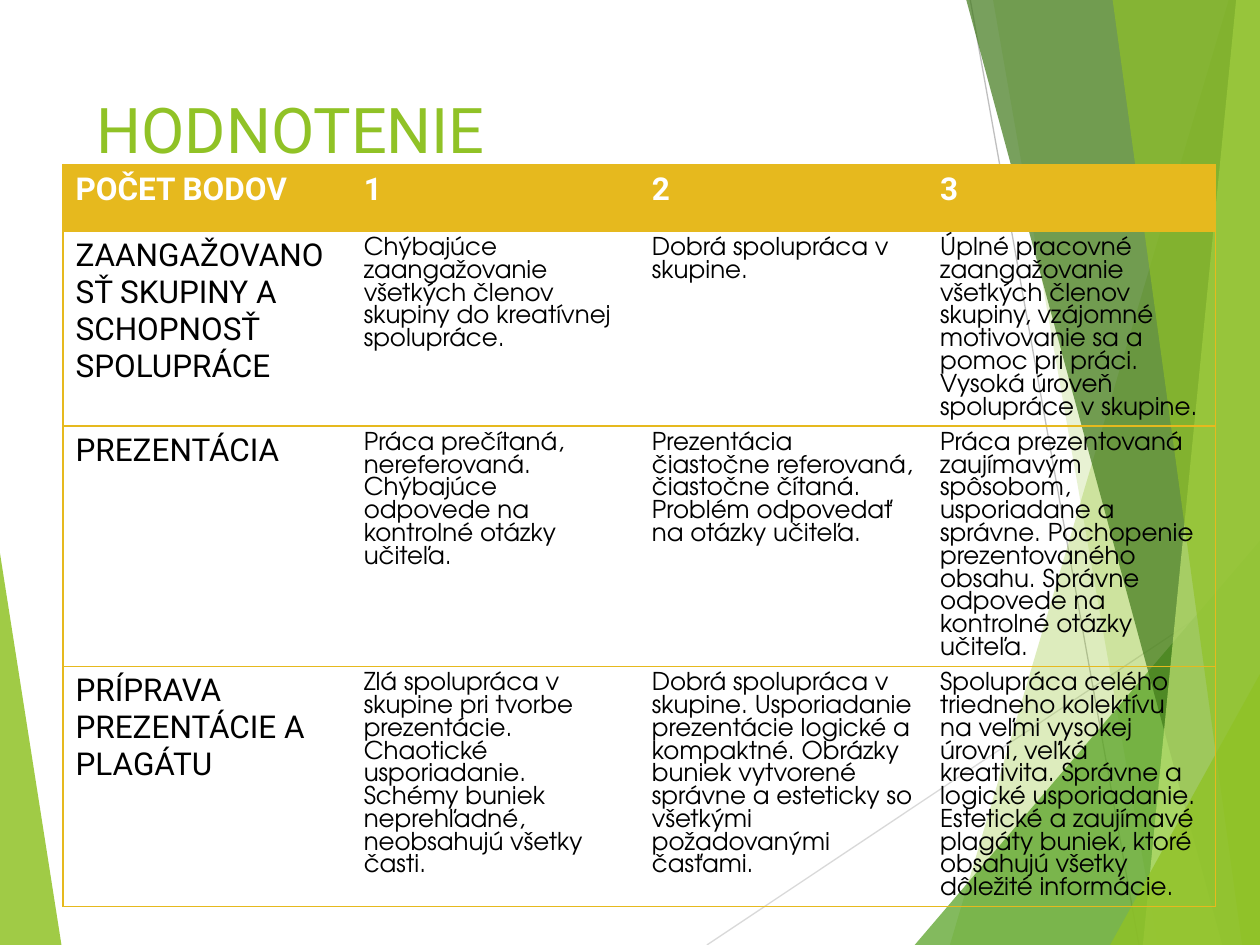
from typing import NamedTuple

from lxml import etree
from pptx import Presentation
from pptx import util as u
from pptx.dml.color import RGBColor
from pptx.enum import shapes, text
from pptx.oxml import ns

WIDTH, HEIGHT = 25.4, 19.05
GREEN, GOLD, WHITE, BLACK = "90C226", "E6B91E", "FFFFFF", "000000"
LABEL_FONT, BODY_FONT = "Roboto", "TeX Gyre Adventor"
COLUMN_WIDTH = 5.81
Point = tuple[float, float]


class Facet(NamedTuple):
    points: list[Point]
    color: str
    opacity: int


class Ray(NamedTuple):
    start: Point
    end: Point
    color: str


class Criterion(NamedTuple):
    height: float
    cells: list[str]


class Style(NamedTuple):
    font: str
    size: int
    color: str
    bold: bool = False
    spacing: int | None = None


HEADER = Style(LABEL_FONT, 18, WHITE, bold=True)
LABEL = Style(LABEL_FONT, 18, BLACK)
BODY = Style(BODY_FONT, 14, BLACK, spacing=13)
TITLE = Style(LABEL_FONT, 36, GREEN)


def band(top_x: float, bottom_x: float) -> list[Point]:
    """Area between a slanted edge and the right side of the slide."""
    return [(top_x, 0), (bottom_x, HEIGHT), (WIDTH, HEIGHT), (WIDTH, 0)]


def corner(side_x: float, top: float, bottom_x: float) -> list[Point]:
    """Triangle standing in a bottom corner of the slide."""
    return [(side_x, top), (bottom_x, HEIGHT), (side_x, HEIGHT)]


LEFT_FACET = Facet(corner(0, 11.15, 1.24), GREEN, 85)
RAYS = [
    Ray((14.25, HEIGHT), (WIDTH, 11.61), "D9D9D9"),
    Ray((19.56, 0), (22.96, HEIGHT), "BFBFBF"),
]
RIGHT_FACETS = [
    Facet(band(24.77, 19.15), GREEN, 30),
    Facet(band(20.02, 23.34), GREEN, 20),
    Facet(corner(WIDTH, 10.9, 18.44), "54A021", 72),
    Facet(band(19.48, 24.64), "3F7819", 70),
    Facet(band(24.92, 23.04), "C0E474", 70),
    Facet(band(22.43, 25.04), GREEN, 65),
    Facet(corner(WIDTH, 13.59, 22.38), GREEN, 80),
]
CRITERIA = [
    Criterion(1.34, ["POČET BODOV", "1", "2", "3"]),
    Criterion(3.89, [
        "ZAANGAŽOVANOSŤ SKUPINY A SCHOPNOSŤ SPOLUPRÁCE",
        "Chýbajúce zaangažovanie všetkých členov skupiny do kreatívnej spolupráce.",
        "Dobrá spolupráca v skupine.",
        "Úplné pracovné zaangažovanie všetkých členov skupiny, vzájomné "
        "motivovanie sa a pomoc pri práci. Vysoká úroveň spolupráce v skupine.",
    ]),
    Criterion(4.82, [
        "PREZENTÁCIA",
        "Práca prečítaná, nereferovaná. Chýbajúce odpovede na kontrolné "
        "otázky učiteľa.",
        "Prezentácia čiastočne referovaná, čiastočne čítaná. Problém "
        "odpovedať na otázky učiteľa.",
        "Práca prezentovaná zaujímavým spôsobom, usporiadane a správne. "
        "Pochopenie prezentovaného obsahu. Správne odpovede na kontrolné "
        "otázky učiteľa.",
    ]),
    Criterion(4.82, [
        "PRÍPRAVA PREZENTÁCIE A PLAGÁTU",
        "Zlá spolupráca v skupine pri tvorbe prezentácie. Chaotické "
        "usporiadanie. Schémy buniek neprehľadné, neobsahujú všetky časti.",
        "Dobrá spolupráca v skupine. Usporiadanie prezentácie logické a "
        "kompaktné. Obrázky buniek vytvorené správne a esteticky so všetkými "
        "požadovanými časťami.",
        "Spolupráca celého triedneho kolektívu na veľmi vysokej úrovní, veľká "
        "kreativita. Správne a logické usporiadanie. Estetické a zaujímavé "
        "plagáty buniek, ktoré obsahujú všetky dôležité informácie.",
    ]),
]


def paint(color_format, color: str) -> None:
    color_format.rgb = RGBColor.from_string(color)


def draw_facet(slide, facet: Facet) -> None:
    corners = [(u.Cm(x), u.Cm(y)) for x, y in facet.points]
    builder = slide.shapes.build_freeform(*corners[0])
    builder.add_line_segments(corners[1:], close=True)
    shape = builder.convert_to_shape()
    shape.shadow.inherit = False
    shape.line.fill.background()
    shape.fill.solid()
    paint(shape.fill.fore_color, facet.color)
    color = shape.element.spPr.find(ns.qn("a:solidFill"))[0]
    etree.SubElement(color, ns.qn("a:alpha"), val=str(facet.opacity * 1000))


def draw_ray(slide, ray: Ray) -> None:
    ends = [u.Cm(value) for value in (*ray.start, *ray.end)]
    line = slide.shapes.add_connector(shapes.MSO_CONNECTOR.STRAIGHT, *ends)
    paint(line.line.color, ray.color)
    line.line.width = u.Pt(0.75)
    etree.SubElement(line.element.spPr, ns.qn("a:effectLst"))


def write(frame, words: str, style: Style) -> None:
    frame.word_wrap = True
    paragraph = frame.paragraphs[0]
    if style.spacing:
        paragraph.line_spacing = u.Pt(style.spacing)
    run = paragraph.add_run()
    run.text = words
    run.font.name = style.font
    run.font.size = u.Pt(style.size)
    run.font.bold = style.bold
    paint(run.font.color, style.color)


def set_borders(cell, visible: str) -> None:
    properties = cell._tc.get_or_add_tcPr()
    for side in "LRTB":
        line = etree.SubElement(properties, ns.qn(f"a:ln{side}"), w=str(u.Pt(1)))
        if side in visible:
            fill = etree.SubElement(line, ns.qn("a:solidFill"))
            etree.SubElement(fill, ns.qn("a:srgbClr"), val=GOLD)
        else:
            etree.SubElement(line, ns.qn("a:noFill"))


def draw_table(slide, criteria: list[Criterion]) -> None:
    columns = len(criteria[0].cells)
    table = slide.shapes.add_table(
        len(criteria), columns, u.Cm(1.27), u.Cm(3.32),
        u.Cm(COLUMN_WIDTH * columns), u.Cm(sum(c.height for c in criteria)),
    ).table
    table.horz_banding = False
    for column in table.columns:
        column.width = u.Cm(COLUMN_WIDTH)
    for i, criterion in enumerate(criteria):
        table.rows[i].height = u.Cm(criterion.height)
        for j, words in enumerate(criterion.cells):
            cell = table.cell(i, j)
            outer = {0: "L", columns - 1: "R"}.get(j, "")
            set_borders(cell, "TB" + outer)
            if i == 0:
                cell.fill.solid()
                paint(cell.fill.fore_color, GOLD)
            else:
                cell.fill.background()
            style = HEADER if i == 0 else LABEL if j == 0 else BODY
            write(cell.text_frame, words, style)


def main() -> None:
    deck = Presentation()
    deck.slide_width, deck.slide_height = u.Cm(WIDTH), u.Cm(HEIGHT)
    slide = deck.slides.add_slide(deck.slide_layouts[6])

    # Background facets and rays
    draw_facet(slide, LEFT_FACET)
    for ray in RAYS:
        draw_ray(slide, ray)
    for facet in RIGHT_FACETS:
        draw_facet(slide, facet)

    # Heading
    heading = slide.shapes.add_textbox(u.Cm(1.7), u.Cm(1.7), u.Cm(17.63), u.Cm(3.66))
    heading.text_frame.vertical_anchor = text.MSO_ANCHOR.TOP
    write(heading.text_frame, "HODNOTENIE", TITLE)

    # Grading table
    draw_table(slide, CRITERIA)
    deck.save("out.pptx")


if __name__ == "__main__":
    main()
